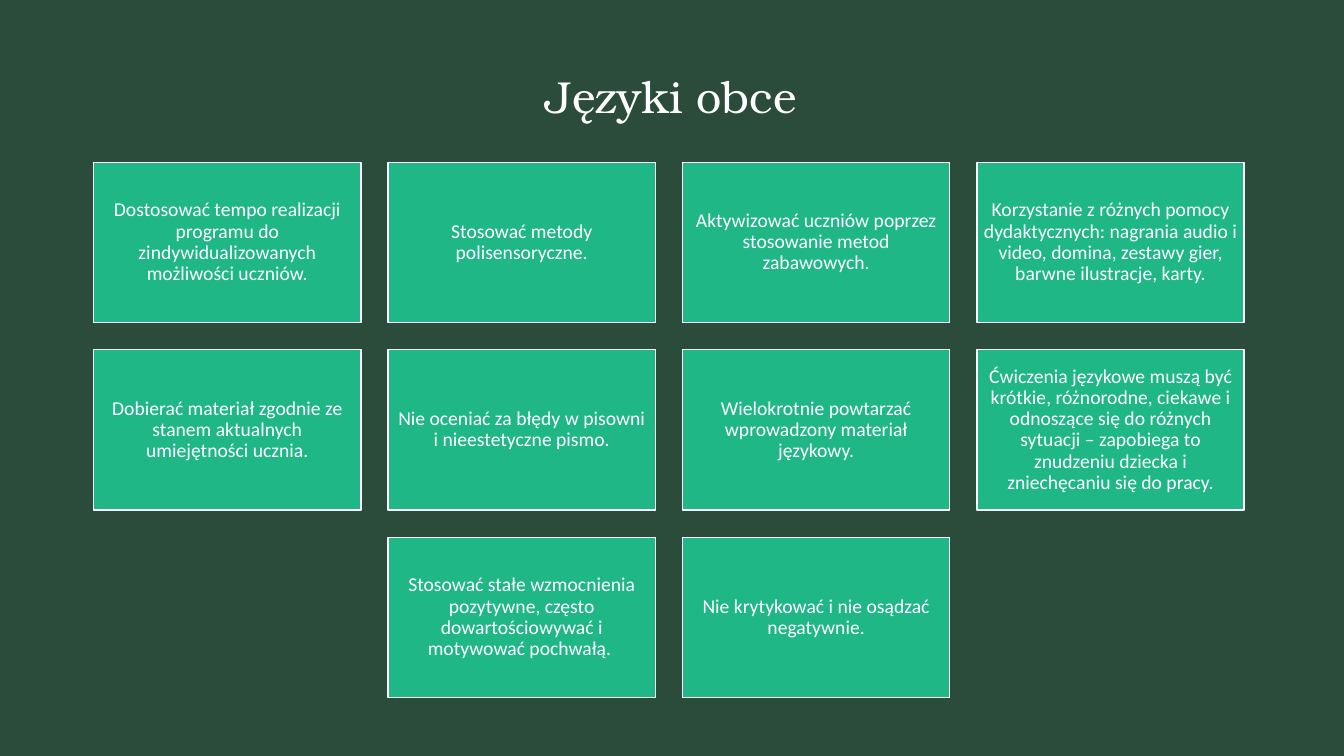
"""Build the slide of guidelines for teaching foreign languages."""
from pptx import Presentation, util as u
from pptx.dml.color import RGBColor
from pptx.enum import shapes, text

TITLE = "Języki obce"
GUIDELINES = [
    "Dostosować tempo realizacji programu do zindywidualizowanych możliwości uczniów.",
    "Stosować metody polisensoryczne.",
    "Aktywizować uczniów poprzez stosowanie metod zabawowych.",
    "Korzystanie z różnych pomocy dydaktycznych: nagrania audio i video, domina, "
    "zestawy gier, barwne ilustracje, karty.",
    "Dobierać materiał zgodnie ze stanem aktualnych umiejętności ucznia.",
    "Nie oceniać za błędy w pisowni i nieestetyczne pismo.",
    "Wielokrotnie powtarzać wprowadzony materiał językowy.",
    "Ćwiczenia językowe muszą być krótkie, różnorodne, ciekawe i odnoszące się do "
    "różnych sytuacji – zapobiega to znudzeniu dziecka i zniechęcaniu się do pracy.",
    "Stosować stałe wzmocnienia pozytywne, często dowartościowywać i motywować pochwałą. ",
    "Nie krytykować i nie osądzać negatywnie.",
]

DARK_GREEN = RGBColor(0x2B, 0x4C, 0x3A)
GREEN = RGBColor(0x20, 0xB7, 0x86)
WHITE = RGBColor(0xFF, 0xFF, 0xFF)

SLIDE_W, SLIDE_H = 13.33, 7.5
COLS = 4
CARD_W, CARD_H, GAP = 2.65, 1.59, 0.27
GRID_TOP = 1.61
GRID_LEFT = 0.93


def write(sp, content, font, size, anchor, inset):
    tf = sp.text_frame
    tf.text = content
    tf.word_wrap = True
    tf.auto_size = text.MSO_AUTO_SIZE.NONE
    tf.vertical_anchor = anchor
    tf.margin_left = tf.margin_right = tf.margin_top = tf.margin_bottom = u.Inches(inset)
    p = tf.paragraphs[0]
    p.alignment = text.PP_ALIGN.CENTER
    p.font.name, p.font.size = font, u.Pt(size)
    p.font.color.rgb = WHITE
    return p


def add_card(s, index, content):
    row, col = divmod(index, COLS)
    in_row = min(COLS, len(GUIDELINES) - row * COLS)
    col += (COLS - in_row) / 2
    left = GRID_LEFT + col * (CARD_W + GAP)
    top = GRID_TOP + row * (CARD_H + GAP)
    sp = s.shapes.add_shape(shapes.MSO_SHAPE.RECTANGLE,
                            *map(u.Inches, (left, top, CARD_W, CARD_H)))
    sp.shadow.inherit = False
    sp.fill.solid()
    sp.fill.fore_color.rgb = GREEN
    sp.line.color.rgb = WHITE
    sp.line.width = u.Pt(1)
    p = write(sp, content, "Calibri", 14, text.MSO_ANCHOR.MIDDLE, 0.06)
    p.line_spacing = 0.9


def main():
    prs = Presentation()
    prs.slide_width, prs.slide_height = u.Inches(SLIDE_W), u.Inches(SLIDE_H)
    s = prs.slides.add_slide(prs.slide_layouts[5])
    s.background.fill.solid()
    s.background.fill.fore_color.rgb = DARK_GREEN

    title = s.shapes.title
    title.left, title.top, title.width, title.height = map(
        u.Inches, (0.79, 0.68, 11.73, 0.78))
    write(title, TITLE, "TeX Gyre Bonum", 32, text.MSO_ANCHOR.TOP, 0)

    for index, content in enumerate(GUIDELINES):
        add_card(s, index, content)
    prs.save("out.pptx")


if __name__ == "__main__":
    main()
